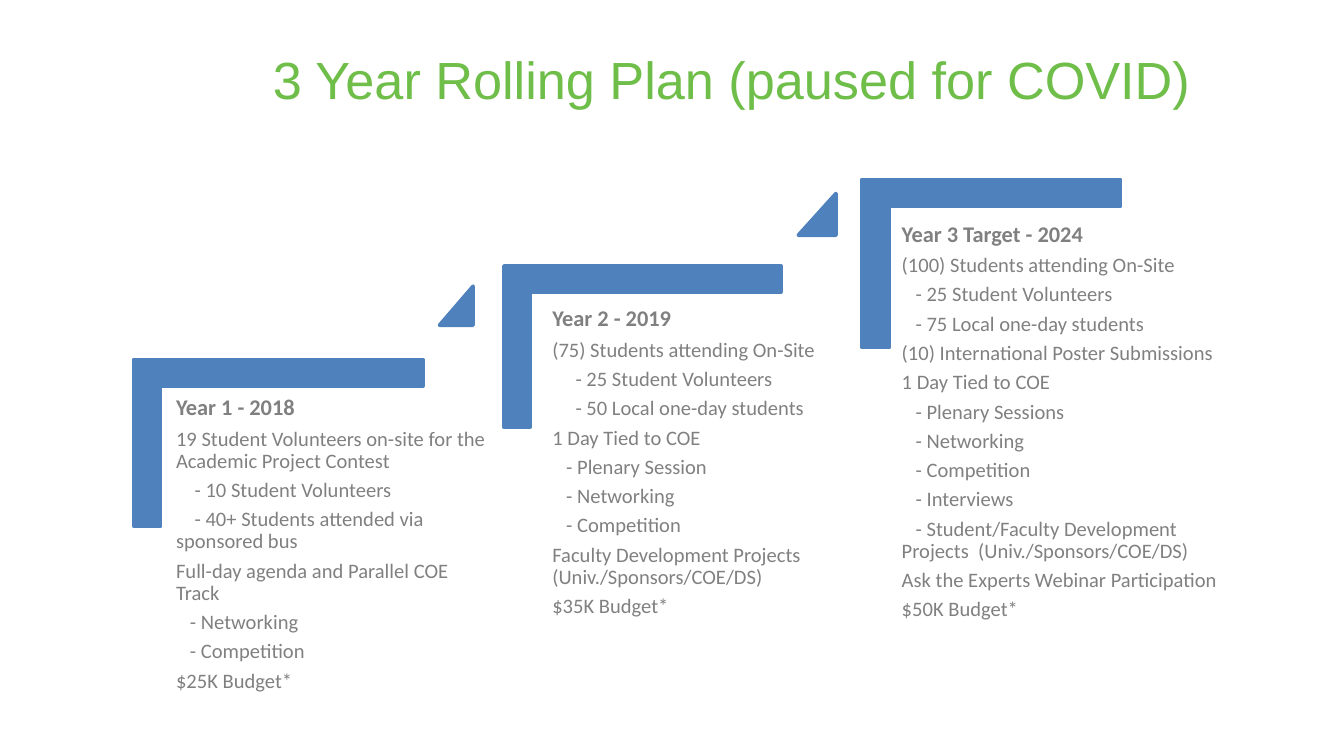
from pptx import Presentation
from pptx.dml.color import RGBColor
from pptx.enum.shapes import MSO_SHAPE
from pptx.enum.text import MSO_ANCHOR, PP_ALIGN
from pptx.util import Inches, Pt

COLUMNS, ROWS = 100, 56.25  # square cells, a tenth of an inch each

# Each step: bracket and text boxes as (column, row, columns, rows), then its
# heading and its lines as (indent in spaces, wording).
STEPS = [
    {"bracket": (9.95, 26.75, 21.5, 12.4), "notes": (12.6, 29, 24.1, 21.6),
     "heading": "Year 1 - 2018",
     "lines": [(0, "19 Student Volunteers on-site for the Academic Project Contest"),
               (4, "- 10 Student Volunteers"),
               (4, "- 40+ Students attended via sponsored bus"),
               (0, "Full-day agenda and Parallel COE Track"),
               (3, "- Networking"),
               (3, "- Competition"),
               (0, "$25K Budget*")]},
    {"bracket": (37.5, 19.8, 20.6, 12), "notes": (40.6, 22.4, 27.3, 21.6),
     "heading": "Year 2 - 2019",
     "lines": [(0, "(75) Students attending On-Site"),
               (5, "- 25 Student Volunteers"),
               (5, "- 50 Local one-day students"),
               (0, "1 Day Tied to COE"),
               (3, "- Plenary Session"),
               (3, "- Networking"),
               (3, "- Competition"),
               (0, "Faculty Development Projects (Univ./Sponsors/COE/DS)"),
               (0, "$35K Budget*")]},
    {"bracket": (64.15, 13.35, 19.2, 12.5), "notes": (66.6, 16.1, 25.3, 21.6),
     "heading": "Year 3 Target - 2024",
     "lines": [(0, "(100) Students attending On-Site"),
               (3, "- 25 Student Volunteers"),
               (3, "- 75 Local one-day students"),
               (0, "(10) International Poster Submissions"),
               (0, "1 Day Tied to COE"),
               (3, "- Plenary Sessions"),
               (3, "- Networking"),
               (3, "- Competition"),
               (3, "- Interviews"),
               (3, "- Student/Faculty Development Projects  (Univ./Sponsors/COE/DS)"),
               (0, "Ask the Experts Webinar Participation"),
               (0, "$50K Budget*")]},
]
RISES = [(32.7, 21.3, 2.5, 2.9), (59.4, 14.4, 2.8, 3.1)]


def color(hex_string):
    return RGBColor.from_string(hex_string)


def apply(target, values):
    for attribute, value in values.items():
        setattr(target, attribute, value)


class PlanSlide:
    ACCENT = "4F81BD"
    BAR_SHARE = 0.161
    SPACE_WIDTH = 0.226  # share of the text size
    TITLE = {"name": "Arial", "size": Pt(28), "bold": False}
    HEADING = {"name": "Calibri", "size": Pt(12), "bold": True}
    LINE = {"name": "Calibri", "size": Pt(11), "bold": False}

    def __init__(self, deck):
        self.cell = deck.slide_width / COLUMNS
        self.slide = deck.slides.add_slide(deck.slide_layouts[5])

    def grid(self, box):
        return [round(length * self.cell) for length in box]

    def title(self, wording, box):
        title = self.slide.shapes.title
        apply(title, dict(zip(("left", "top", "width", "height"), self.grid(box))))
        apply(title.text_frame, {"text": wording, "word_wrap": True,
                                 "vertical_anchor": MSO_ANCHOR.BOTTOM})
        heading = title.text_frame.paragraphs[0]
        heading.alignment = PP_ALIGN.LEFT
        apply(heading.font, self.TITLE)
        heading.font.color.rgb = color("6EBE49")

    def accent_shape(self, kind, box, adjustments):
        shape = self.slide.shapes.add_shape(kind, *self.grid(box))
        shape.shadow.inherit = False
        shape.fill.solid()
        shape.fill.fore_color.rgb = color(self.ACCENT)
        shape.line.color.rgb = color(self.ACCENT)
        shape.line.width = Pt(2)
        for index, share in enumerate(adjustments):
            shape.adjustments[index] = share
        return shape

    def bracket(self, box):
        """Add a corner turned a quarter, so that it fills box once turned."""
        left, top, width, height = box
        shift = (width - height) / 2
        corner = self.accent_shape(MSO_SHAPE.CORNER,
                                   (left + shift, top - shift, height, width),
                                   [self.BAR_SHARE] * 2)
        corner.rotation = 90

    def rise(self, box):
        self.accent_shape(MSO_SHAPE.ISOSCELES_TRIANGLE, box, [1])

    def notes(self, heading, lines, box):
        frame = self.slide.shapes.add_textbox(*self.grid(box)).text_frame
        frame.word_wrap = True
        apply(frame, {f"margin_{side}": Inches(0.05)
                      for side in ("left", "top", "right", "bottom")})
        self.paragraph(frame.paragraphs[0], heading, self.HEADING)
        for spaces, wording in lines:
            self.paragraph(frame.add_paragraph(), wording, self.LINE, spaces)

    def paragraph(self, paragraph, wording, font, spaces=0):
        size = font["size"]
        first_line = round(spaces * self.SPACE_WIDTH * size)
        properties = paragraph._p.get_or_add_pPr()
        properties.set("marL", "0")
        properties.set("indent", str(first_line))
        apply(paragraph, {"text": wording, "line_spacing": 0.9,
                          "space_after": Pt(round(size.pt * 0.35, 1))})
        apply(paragraph.font, font)
        paragraph.font.color.rgb = color("808080")


def main():
    deck = Presentation()
    deck.slide_width = Inches(10)
    deck.slide_height = round(deck.slide_width * ROWS / COLUMNS)
    plan = PlanSlide(deck)
    plan.title("3 Year Rolling Plan (paused for COVID)", (19.3, 2.1, 72.5, 6.6))
    for step in STEPS:
        plan.bracket(step["bracket"])
        plan.notes(step["heading"], step["lines"], step["notes"])
    for box in RISES:
        plan.rise(box)
    deck.save("out.pptx")


if __name__ == "__main__":
    main()
